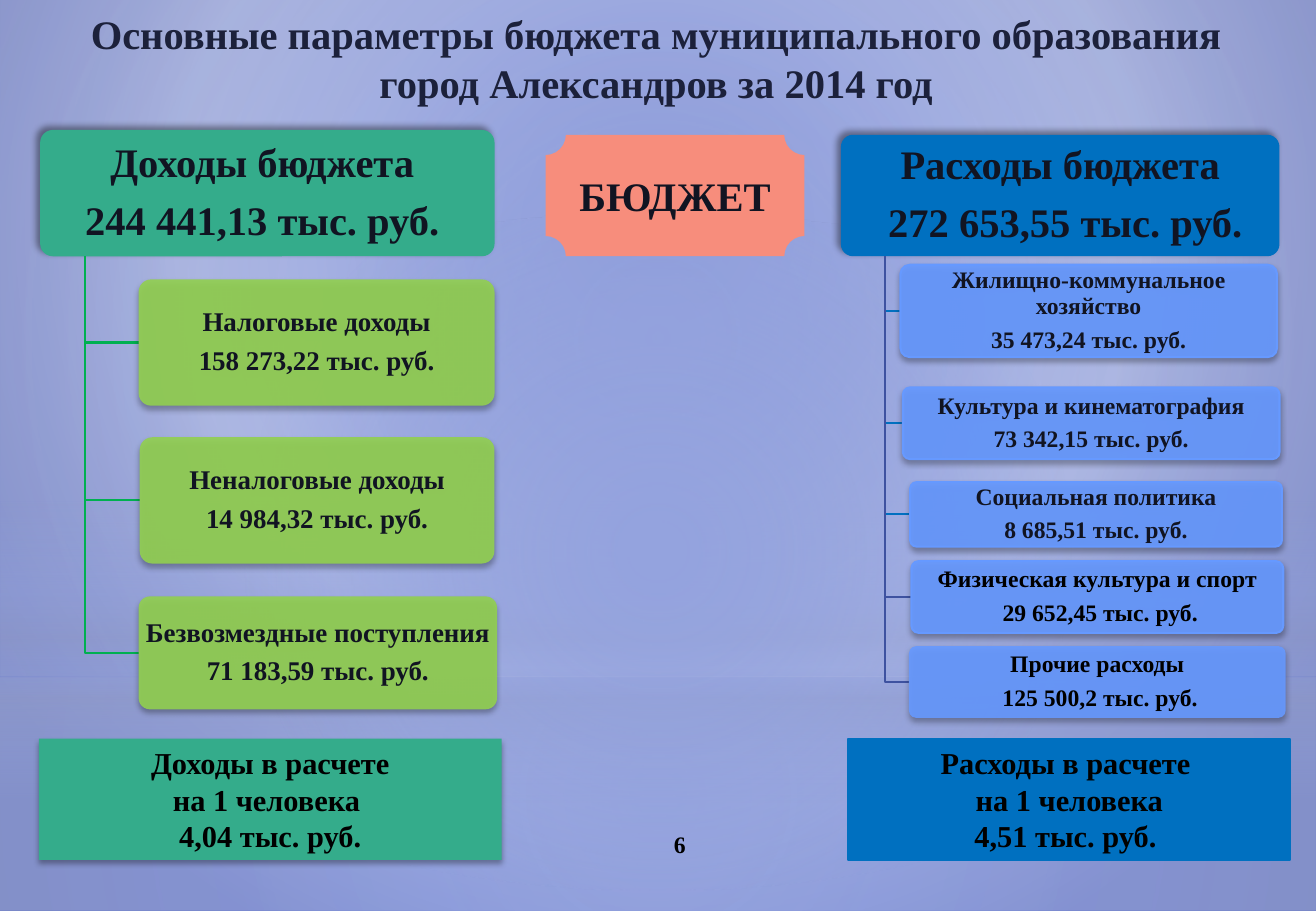
from lxml import etree
from pptx import Presentation
from pptx.dml.color import RGBColor
from pptx.enum.shapes import MSO_SHAPE
from pptx.enum.text import MSO_ANCHOR, PP_ALIGN
from pptx.oxml.ns import qn
from pptx.util import Inches, Pt

RECT, OVAL = MSO_SHAPE.RECTANGLE, MSO_SHAPE.OVAL
ROUND, PLAQUE = MSO_SHAPE.ROUNDED_RECTANGLE, MSO_SHAPE.PLAQUE
MID, CENTER = MSO_ANCHOR.MIDDLE, PP_ALIGN.CENTER
FONT = "Times New Roman"
WIDE, HIGH = Inches(10.83), Inches(7.5)
INK, BLACK = "111422", "000000"
GREEN, LIME, BLUE, SKY = "34AC8B", "92D050", "0070C0", "6699FF"
LEAF, NAVY = "00B050", "3E52A0"
# Shadows: opacity %, blur pt, distance pt, angle
SOFT, DEEP = (32, 3.5, 2.2, 90), (40, 4, 3, 225)


def rgb(code):
    return RGBColor.from_string(code)


def emu(x, y):
    """Turn shares of the slide, in percent, into lengths."""
    return int(WIDE * x / 100), int(HIGH * y / 100)


def place(box):
    x, y, w, h = box
    return emu(x, y) + emu(w, h)


def add(parent, tag, **attrs):
    node = etree.SubElement(parent, qn(tag))
    for key, val in attrs.items():
        node.set(key, str(val))
    return node


def fade(node, share):
    add(node, "a:alpha", val=int(share * 1000))


def blend(fill, root, stops, focus=None):
    """Gradient of (position, colour, opacity) stops, radial if focus is given."""
    fill.gradient()
    grad = next(root.iter(qn("a:gradFill")))
    for child in list(grad):
        grad.remove(child)
    row = add(grad, "a:gsLst")
    for pos, code, share in stops:
        stop = add(row, "a:gs", pos=pos * 1000)
        fade(add(stop, "a:srgbClr", val=code), share)
    if focus:
        ring = add(grad, "a:path", path="circle")
        sides = {k: v * 1000 for k, v in zip("ltrb", focus)}
        add(ring, "a:fillToRect", **sides)
    else:
        add(grad, "a:lin", ang=5400000, scaled=0)


def write(shape, lines, size, ink, pad=0.1, tight=False):
    frame = shape.text_frame
    frame.word_wrap = True
    frame.vertical_anchor = MID
    frame.margin_left = frame.margin_right = Inches(pad)
    frame.margin_top = frame.margin_bottom = Inches(pad / 2)
    for i, line in enumerate(lines):
        para = frame.paragraphs[0] if i == 0 else frame.add_paragraph()
        para.alignment = CENTER
        if tight:
            para.line_spacing = 0.9
            para.space_after = Pt(size * 0.35)
        run = para.add_run()
        run.text = line
        font = run.font
        font.name, font.size, font.bold = FONT, Pt(size), True
        font.color.rgb = rgb(ink)


def block(slide, kind, box, fill=None, edge=None, shade=None, share=100):
    shape = slide.shapes.add_shape(kind, *place(box))
    shape.shadow.inherit = False
    props = shape._element.spPr
    if kind == ROUND:
        shape.adjustments[0] = 0.1
    if fill:
        shape.fill.solid()
        shape.fill.fore_color.rgb = rgb(fill)
        if share < 100:
            fade(next(props.iter(qn("a:srgbClr"))), share)
    if edge:
        shape.line.color.rgb = rgb(edge)
        shape.line.width = Pt(1.25)
    else:
        shape.line.fill.background()
    if shade:
        dark, blur, dist, ang = shade
        cast = add(props.find(qn("a:effectLst")), "a:outerShdw",
                   blurRad=int(Pt(blur)), dist=int(Pt(dist)),
                   dir=ang * 60000, rotWithShape=0)
        fade(add(cast, "a:srgbClr", val=BLACK), dark)
    return shape


def label(slide, box, text, size, ink):
    write(slide.shapes.add_textbox(*place(box)), [text], size, ink)


def elbow(slide, start, end, code):
    path = slide.shapes.build_freeform(*emu(*start))
    path.add_line_segments([emu(start[0], end[1]), emu(*end)], close=False)
    wire = path.convert_to_shape()
    wire.shadow.inherit = False
    wire.fill.background()
    wire.line.color.rgb = rgb(code)
    wire.line.width = Pt(1.25)


def backdrop(slide):
    pale, gray = "94A3DE", "909ACA"
    mid = (50, 50, 50, 50)
    blend(slide.background.fill, slide._element,
          [(0, "7D8BD2", 100), (60, "DEE1F2", 100), (100, "5568C5", 100)],
          (20, 10, 20, 60))
    layers = [
        (RECT, (0, 74.4, 100, 25.6), mid,
         [(0, pale, 91), (37, pale, 76), (100, gray, 79)]),
        (RECT, (0, 0, 100, 74.4), mid,
         [(0, pale, 89), (48, pale, 62), (100, gray, 79)]),
        (RECT, (0, 54.93, 100, 33.33), None,
         [(0, pale, 0), (29, pale, 30), (45, gray, 40),
          (55, pale, 26), (65, gray, 60), (100, pale, 0)]),
        (OVAL, (0, 23.33, 100, 74.4), mid,
         [(0, pale, 100), (56, pale, 0)]),
    ]
    for kind, box, focus, stops in layers:
        shape = block(slide, kind, box)
        blend(shape.fill, shape._element, stops, focus)


def branch(slide, box, head, fill, trunk, leaf, size, rows):
    """Head block in the box; rows hang below it, offset from its corner."""
    x, y, w, h = box
    top = block(slide, ROUND, box, fill, shade=DEEP)
    write(top, head, 24, INK, 0.05, True)
    for (dx, dy, rw, rh), lines, ink, wire, edge in rows:
        elbow(slide, (x + trunk, y + h), (x + dx, y + dy + rh / 2), wire)
        item = block(slide, ROUND, (x + dx, y + dy, rw, rh), leaf,
                     edge, SOFT, 90)
        write(item, lines, size, ink, 0.03, True)


def main():
    deck = Presentation()
    deck.slide_width, deck.slide_height = WIDE, HIGH
    slide = deck.slides.add_slide(deck.slide_layouts[6])
    backdrop(slide)

    # Title and page number
    label(slide, (41.64, 90, 20.04, 5.33), "6", 14, BLACK)
    label(slide, (3.32, 0, 93.07, 12.67),
          "Основные параметры бюджета муниципального образования "
          "город Александров за 2014 год", 24, "1C213B")

    # Totals per person
    left = block(slide, RECT, (2.95, 81.07, 35.18, 13.33), GREEN, shade=SOFT)
    write(left, ["Доходы в расчете", "на 1 человека ", "4,04 тыс. руб."],
          18, BLACK)
    right = block(slide, RECT, (64.45, 81.07, 33.61, 13.33), BLUE, BLUE)
    write(right, ["Расходы в расчете ", "на 1 человека", "4,51 тыс. руб. "],
          18, BLACK)

    # Income
    branch(slide, (3.05, 14.27, 34.53, 13.87),
           ["Доходы бюджета ", "244 441,13 тыс. руб. "],
           GREEN, 3.42, LIME, 16, [
        ((7.48, 16.4, 27.05, 13.87),
         ["Налоговые доходы", "158 273,22 тыс. руб."], INK, LEAF, None),
        ((7.57, 33.73, 26.96, 13.87),
         ["Неналоговые доходы", "14 984,32 тыс. руб."], INK, LEAF, None),
        ((7.48, 51.2, 27.24, 12.4),
         ["Безвозмездные поступления ", "71 183,59 тыс. руб."],
         INK, LEAF, None)])

    # Centre plaque
    badge = block(slide, PLAQUE, (41.46, 14.8, 19.67, 13.33), "F78D7C")
    write(badge, ["БЮДЖЕТ"], 24, INK)

    # Spending
    branch(slide, (63.9, 14.8, 33.33, 13.33),
           ["Расходы бюджета", " 272 653,55 тыс. руб."],
           BLUE, 3.32, SKY, 14, [
        ((4.52, 14.27, 28.62, 10.13),
         ["Жилищно-коммунальное хозяйство", "35 473,24 тыс. руб."],
         INK, BLUE, SKY),
        ((4.71, 27.73, 28.62, 7.87),
         ["Культура и кинематография", "73 342,15 тыс. руб."],
         INK, BLUE, SKY),
        ((5.26, 38.13, 28.25, 7.07),
         ["Социальная политика", "8 685,51 тыс. руб."], INK, BLUE, SKY),
        ((5.36, 46.8, 28.25, 7.87),
         ["Физическая культура и спорт", " 29 652,45 тыс. руб."],
         BLACK, NAVY, SKY),
        ((5.17, 56.13, 28.62, 7.87),
         ["Прочие расходы", " 125 500,2 тыс. руб."], BLACK, NAVY, None)])
    deck.save("out.pptx")


if __name__ == "__main__":
    main()
